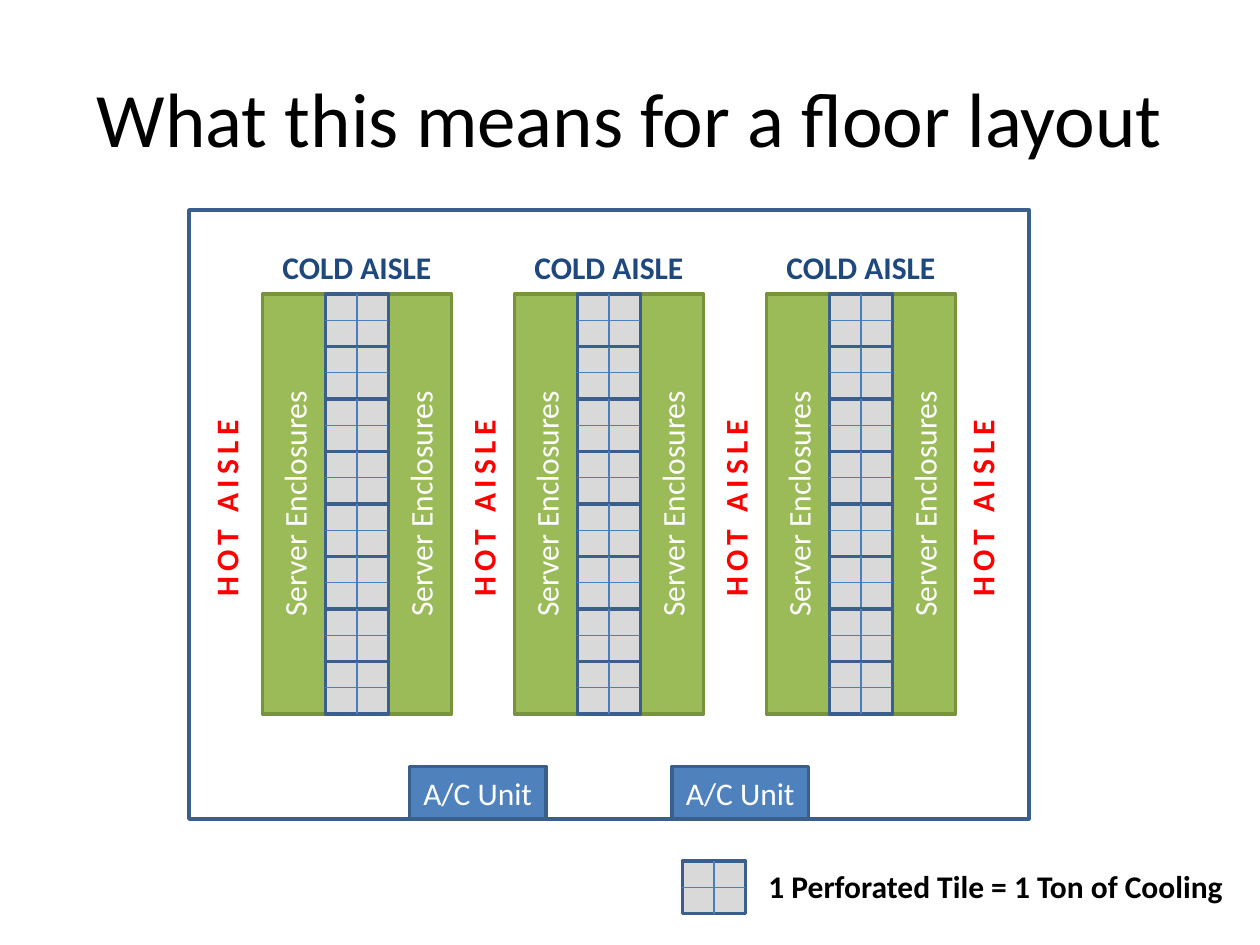
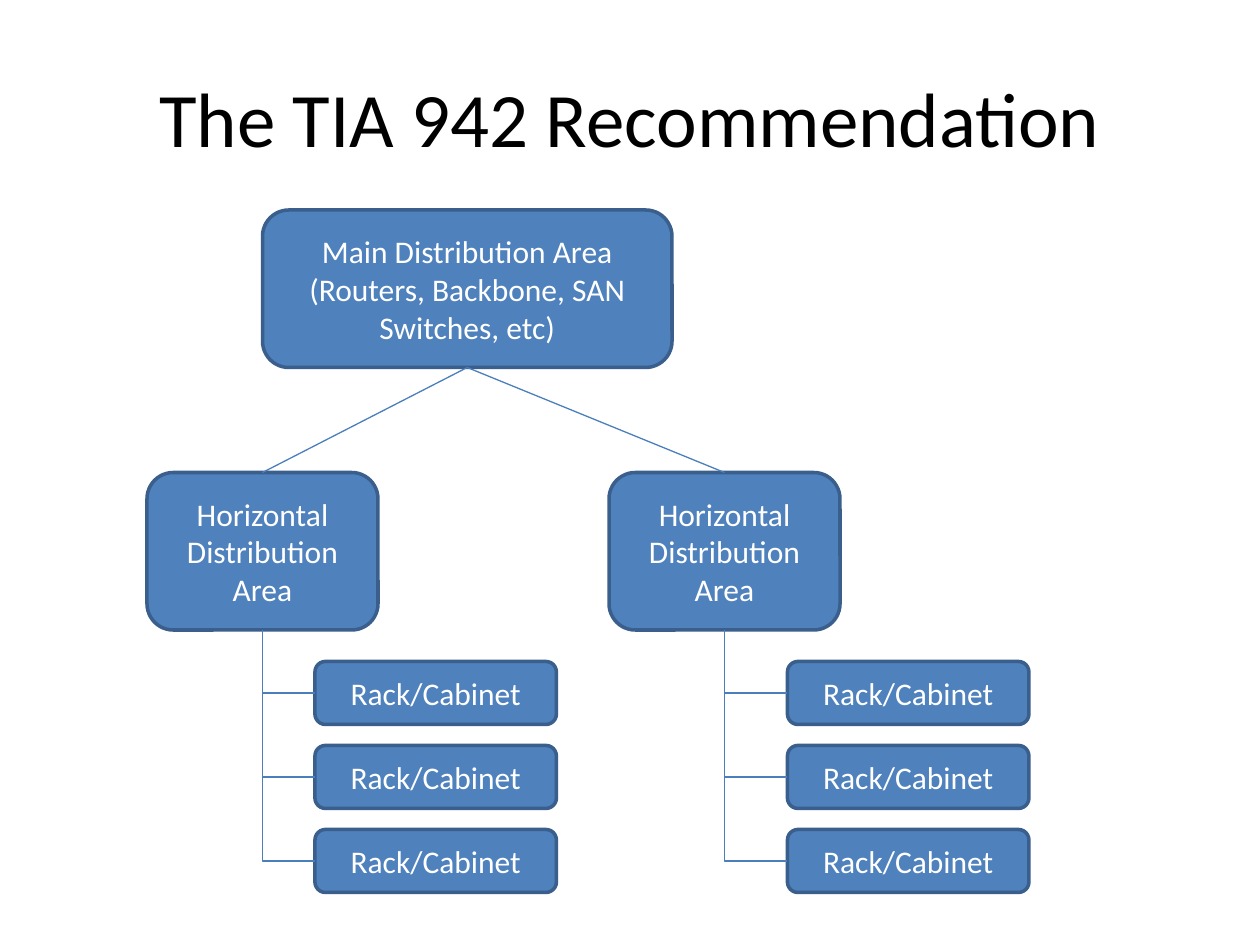
from lxml import etree
from pptx import Presentation
from pptx.dml.color import RGBColor
from pptx.enum.shapes import MSO_CONNECTOR, MSO_SHAPE
from pptx.enum.text import MSO_ANCHOR, PP_ALIGN
from pptx.oxml.ns import qn
from pptx.util import Inches, Pt

RECT, ROUND = MSO_SHAPE.RECTANGLE, MSO_SHAPE.ROUNDED_RECTANGLE
LINE, ELBOW = MSO_CONNECTOR.STRAIGHT, MSO_CONNECTOR.ELBOW
LEFT, CENTER = PP_ALIGN.LEFT, PP_ALIGN.CENTER
MIDDLE, TOP = MSO_ANCHOR.MIDDLE, MSO_ANCHOR.TOP

BLACK = RGBColor(0x00, 0x00, 0x00)
WHITE = RGBColor(0xFF, 0xFF, 0xFF)
BLUE = RGBColor(0x4F, 0x81, 0xBD)
EDGE = RGBColor(0x3A, 0x5F, 0x8C)
THIN = RGBColor(0x4B, 0x7E, 0xBC)
NAVY = RGBColor(0x1F, 0x49, 0x7D)
RED = RGBColor(0xFF, 0x00, 0x00)
GREEN = RGBColor(0x9B, 0xBB, 0x59)
MOSS = RGBColor(0x77, 0x93, 0x3C)
GREY = RGBColor(0xD9, 0xD9, 0xD9)

FONT = "Calibri"
CELL = Inches(1) / 12  # the slide is a grid of 120 by 90 cells
LABEL = 4.8  # height of a one-line label
TILE = (6, 5)
BOTTOM, SIDE = 2, 1  # connection sites; the top is 0


def grid(*cells):
    return [round(n * CELL) for n in cells]


def write(frame, lines, color, size=18, bold=None, align=CENTER, anchor=MIDDLE, gap=0):
    """Fill a frame, one paragraph a line; gap is letter spacing in points."""
    frame.vertical_anchor = anchor
    for i, line in enumerate(lines):
        para = frame.add_paragraph() if i else frame.paragraphs[0]
        para.alignment = align
        run = para.add_run()
        run.text = line
        font = run.font
        font.name, font.size, font.bold = FONT, Pt(size), bold
        font.color.rgb = color
        if gap:
            run._r.get_or_add_rPr().set("spc", str(gap * 100))


def upright(x, y, w, h):
    """Box that covers x, y, w, h once it is turned by 270 degrees."""
    return x + (w - h) / 2, y + (h - w) / 2, h, w


def block(shapes, box, lines=(), kind=RECT, fill=BLUE, edge=EDGE, turn=False):
    shape = shapes.add_shape(kind, *grid(*(upright(*box) if turn else box)))
    shape.shadow.inherit = False
    if turn:
        shape.rotation = 270
    if fill is None:
        shape.fill.background()
    else:
        shape.fill.solid()
        shape.fill.fore_color.rgb = fill
    shape.line.color.rgb = edge
    shape.line.width = Pt(2)
    write(shape.text_frame, lines, WHITE)
    return shape


def label(shapes, box, text, color, align=CENTER, turn=False, wrap=True, gap=0):
    note = shapes.add_textbox(*grid(*(upright(*box) if turn else box)))
    if turn:
        note.rotation = 270
    note.text_frame.word_wrap = wrap
    write(note.text_frame, [text], color, bold=True, align=align, anchor=TOP, gap=gap)


def wire(shapes, ends=(0, 0, 0, 0), kind=LINE):
    link = shapes.add_connector(kind, *grid(*ends))
    link.line.color.rgb = THIN
    link.line.width = Pt(0.75)
    etree.SubElement(link._element.spPr, qn("a:effectLst"))
    return link


def join(shapes, start, site, end, goal, kind=LINE):
    link = wire(shapes, kind=kind)
    link.begin_connect(start, site)
    link.end_connect(end, goal)
    if kind == ELBOW:
        link._element.spPr.find(qn("a:prstGeom")).set("prst", "bentConnector2")


def tile(shapes, x, y):
    w, h = TILE
    block(shapes, (x, y, w, h), fill=GREY)
    wire(shapes, (x + w / 2, y, x + w / 2, y + h))
    wire(shapes, (x, y + h / 2, x + w, y + h / 2))


def aisle(shapes, x, y, w, h):
    """Cold aisle: a column of tiles between two rows of enclosures."""
    third = w / 3
    for left in (x, x + 2 * third):
        block(shapes, (left, y, third, h), ["Server Enclosures"],
              fill=GREEN, edge=MOSS, turn=True)
    group = shapes.add_group_shape().shapes
    for row in range(8):
        tile(group, x + third, y + row * TILE[1])
    label(shapes, (x, y - 5, w, LABEL), "COLD AISLE", NAVY)


def room(shapes, x, y, w, h):
    block(shapes, (x, y, w, h), fill=None)
    for col in range(3):
        aisle(shapes, x + 7 + 24 * col, y + 8, 18, 40)
    for mid in (3.5, 28, 52, w - 4.5):
        box = (x + mid - LABEL / 2, y + 18, LABEL, 20)
        label(shapes, box, "HOT AISLE", RED, align=LEFT, turn=True, gap=3)
    for left in (21, 46):
        block(shapes, (x + left, y + h - 5, 13, 5), ["A/C Unit"])


def legend(shapes, x, y, w):
    group = shapes.add_group_shape().shapes
    tile(group, x, y)
    label(group, (x + 7, y, w - 7, LABEL), "1 Perforated Tile = 1 Ton of Cooling",
          BLACK, align=LEFT, wrap=False)


def branch(shapes, root, x, y, w, h, inset):
    """Horizontal area under the root, with its racks set in from the left."""
    area = block(shapes, (x, y, w, h), ["Horizontal Distribution Area"], ROUND)
    join(shapes, root, BOTTOM, area, 0)
    for row in range(3):
        box = (x + inset, y + h + 3 + 8 * row, 23, 6)
        rack = block(shapes, box, ["Rack/Cabinet"], ROUND)
        join(shapes, rack, SIDE, area, BOTTOM, ELBOW)


def tree(shapes, x, y):
    root = block(shapes, (x + 11, y, 39, 15),
                 ["Main Distribution Area", "(Routers, Backbone, SAN Switches, etc)"], ROUND)
    for left, inset in ((0, 16), (44, 17)):
        branch(shapes, root, x + left, y + 25, 22, 15, inset)


def page(deck, text):
    """Add a titled slide and return its shapes."""
    shapes = deck.slides.add_slide(deck.slide_layouts[5]).shapes
    title = shapes.title
    title.left, title.top, title.width, title.height = grid(6, 3.6, 108, 15)
    write(title.text_frame, [text], BLACK, size=44)
    return shapes


def main():
    deck = Presentation()
    deck.slide_width, deck.slide_height = grid(120, 90)
    floor = page(deck, "What this means for a floor layout")
    room(floor, 18, 20, 80, 58)
    legend(floor, 65, 82, 53)
    tree(page(deck, "The TIA 942 Recommendation"), 14, 20)
    deck.save("out.pptx")


if __name__ == "__main__":
    main()
